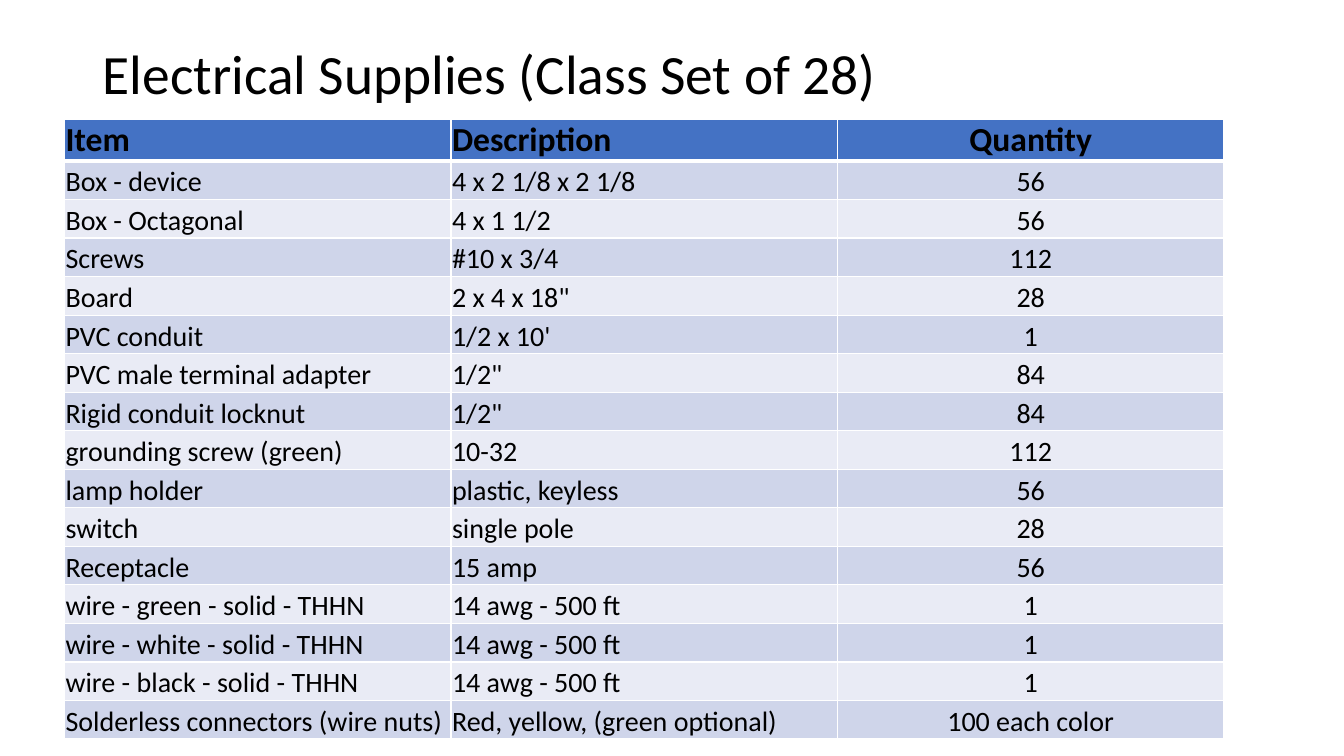
"""Build the electrical supplies slide with its class-set table."""
import pptx
import pptx.dml.color
import pptx.enum.text
import pptx.oxml
import pptx.oxml.ns
import pptx.util

TITLE = "Electrical Supplies (Class Set of 28)"
ROWS = [
    ("Item", "Description", "Quantity"),
    ("Box - device", "4 x 2 1/8 x 2 1/8", "56"),
    ("Box - Octagonal", "4 x 1 1/2", "56"),
    ("Screws", "#10 x 3/4", "112"),
    ("Board", '2 x 4 x 18"', "28"),
    ("PVC conduit", "1/2 x 10'", "1"),
    ("PVC male terminal adapter", '1/2"', "84"),
    ("Rigid conduit locknut", '1/2"', "84"),
    ("grounding screw (green)", "10-32", "112"),
    ("lamp holder", "plastic, keyless", "56"),
    ("switch", "single pole", "28"),
    ("Receptacle", "15 amp", "56"),
    ("wire - green - solid - THHN", "14 awg - 500 ft", "1"),
    ("wire - white - solid - THHN", "14 awg - 500 ft", "1"),
    ("wire - black - solid - THHN", "14 awg - 500 ft", "1"),
    ("Solderless connectors (wire nuts)", "Red, yellow, (green optional)", "100 each color"),
]

RGB = pptx.dml.color.RGBColor
BLACK, WHITE = RGB(0, 0, 0), RGB(0xFF, 0xFF, 0xFF)
BLUE = RGB(0x44, 0x72, 0xC4)
BANDS = RGB(0xE9, 0xEB, 0xF5), RGB(0xCF, 0xD5, 0xEA)

Inches, Pt = pptx.util.Inches, pptx.util.Pt
ALIGN, ANCHOR = pptx.enum.text.PP_ALIGN, pptx.enum.text.MSO_ANCHOR
ALIGNS = ALIGN.LEFT, ALIGN.LEFT, ALIGN.CENTER
TABLE_LEFT, TABLE_TOP, TABLE_W, TABLE_H = 0.64, 1.18, 11.5, 6.13
HEADER_H = 0.39
BODY_H = (TABLE_H - HEADER_H) / (len(ROWS) - 1)
TITLE_BOX = dict(left=Inches(0.92), top=Inches(0.4), width=Inches(11.5), height=Inches(0.71))
TITLE_FRAME = dict(text=TITLE, word_wrap=True, vertical_anchor=ANCHOR.MIDDLE,
                   auto_size=pptx.enum.text.MSO_AUTO_SIZE.NONE)
CELL = dict(vertical_anchor=ANCHOR.BOTTOM, margin_left=Inches(0.01), margin_right=Inches(0.01),
            margin_top=Inches(0.01), margin_bottom=0)


def assign(obj, values):
    for name, value in values.items():
        setattr(obj, name, value)


def style(p, size, align, bold=False):
    p.alignment = align
    assign(p.runs[0].font, dict(name="Calibri", size=Pt(size), bold=bold))
    p.runs[0].font.color.rgb = BLACK


def add_borders(cell, widths):
    tc_pr = cell._tc.get_or_add_tcPr()
    for i, (side, width) in enumerate(widths.items()):
        tc_pr.insert(i, pptx.oxml.parse_xml(
            f'<a:ln{side} {pptx.oxml.ns.nsdecls("a")} w="{Pt(width)}"><a:solidFill>'
            f'<a:srgbClr val="{WHITE}"/></a:solidFill></a:ln{side}>'))


def add_title(s):
    sp = s.shapes.title
    assign(sp, TITLE_BOX)
    assign(sp.text_frame, TITLE_FRAME)
    p = sp.text_frame.paragraphs[0]
    p.line_spacing = 0.9
    style(p, 39.6, ALIGN.LEFT)


def add_supplies(s):
    box = map(Inches, (TABLE_LEFT, TABLE_TOP, TABLE_W, TABLE_H))
    table = s.shapes.add_table(len(ROWS), len(ALIGNS), *box).table
    for r, row in enumerate(ROWS):
        header = r == 0
        table.rows[r].height = Inches(HEADER_H if header else BODY_H)
        widths = dict(L=1, R=1, T=3 if r == 1 else 1, B=3 if header else 1)
        for c, text in enumerate(row):
            cell = table.cell(r, c)
            cell.text = text
            assign(cell, CELL)
            cell.fill.solid()
            cell.fill.fore_color.rgb = BLUE if header else BANDS[r % 2]
            add_borders(cell, widths)
            style(cell.text_frame.paragraphs[0], 24 if header else 20, ALIGNS[c], header)


def main():
    prs = pptx.Presentation()
    assign(prs, dict(slide_width=Inches(13.33), slide_height=Inches(7.5)))
    s = prs.slides.add_slide(prs.slide_layouts[5])
    add_title(s)
    add_supplies(s)
    prs.save("out.pptx")


if __name__ == "__main__":
    main()
